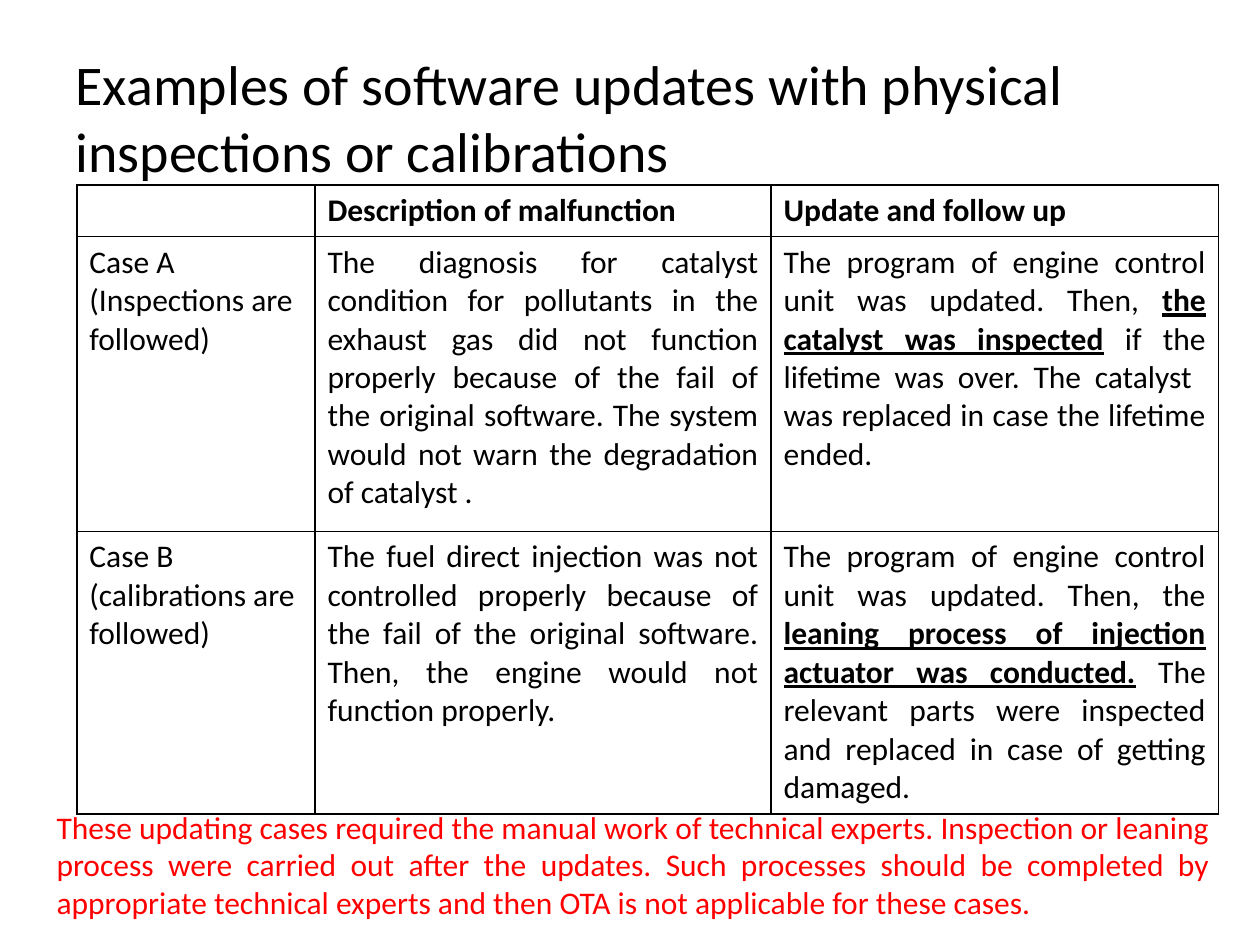
from lxml.etree import SubElement
from pptx import Presentation
from pptx.dml.color import RGBColor
from pptx.enum.text import MSO_ANCHOR, PP_ALIGN
from pptx.oxml.ns import qn
from pptx.util import Inches, Pt

HUES = {"ink": "000000", "note": "FF0000"}
TITLE = "Examples of software updates with physical inspections or calibrations"
NOTE = (
    "These updating cases required the manual work of technical experts. "
    "Inspection or leaning process were carried out after the updates. "
    "Such processes should be completed by appropriate technical experts "
    "and then OTA is not applicable for these cases."
)
PLAIN = {"bold": False, "underline": False}
HEAD = {"bold": True, "underline": False}
KEY = {"bold": True, "underline": True}

ROWS = [
    [
        [],
        [[("Description of malfunction", HEAD)]],
        [[("Update and follow up", HEAD)]],
    ],
    [
        [[("Case A", PLAIN)], [("(Inspections are followed)", PLAIN)]],
        [[(
            "The diagnosis for catalyst condition for pollutants in the exhaust gas "
            "did not function properly because of the fail of the original software. "
            "The system would not warn the degradation of catalyst .", PLAIN)]],
        [[
            ("The program of engine control unit was updated. Then, ", PLAIN),
            ("the catalyst was inspected", KEY),
            (" if the lifetime was over. The catalyst  was replaced in case "
             "the lifetime ended.", PLAIN),
        ]],
    ],
    [
        [[("Case B", PLAIN)], [("(calibrations are followed)", PLAIN)]],
        [[(
            "The fuel direct injection was not controlled properly because of the fail "
            "of the original software. Then, the engine would not function properly.",
            PLAIN)]],
        [[
            ("The program of engine control unit was updated. Then, the ", PLAIN),
            ("leaning process of injection actuator was conducted.", KEY),
            (" The relevant parts were inspected and replaced in case of "
             "getting damaged.", PLAIN),
        ]],
    ],
]
WIDTHS = [1.89, 3.62, 3.55]
HEIGHTS = [0.41, 2.34, 2.24]


def add_run(para, text, size=18, hue="ink", form=PLAIN):
    run = para.add_run()
    run.text = text
    for key, value in {"name": "Calibri", "size": Pt(size), **form}.items():
        setattr(run.font, key, value)
    run.font.color.rgb = RGBColor.from_string(HUES[hue])


def add_edges(cell, wide):
    props = cell._tc.get_or_add_tcPr()
    for spot, side in enumerate(("L", "R", "T", "B")):
        edge = SubElement(props, qn(f"a:ln{side}"), w=str(Pt(wide[side])))
        fill = SubElement(edge, qn("a:solidFill"))
        SubElement(fill, qn("a:srgbClr"), val=HUES["ink"])
        props.insert(spot, edge)


def fill_cell(cell, paras, row, col):
    cell.fill.background()
    add_edges(cell, {
        "L": 1, "R": 1,
        "T": 0.75 if row == 1 else 1,
        "B": 0.75 if row == 0 else 1,
    })
    frame = cell.text_frame
    for spot, runs in enumerate(paras):
        para = frame.add_paragraph() if spot else frame.paragraphs[0]
        para.alignment = PP_ALIGN.JUSTIFY if row and col else PP_ALIGN.LEFT
        for text, form in runs:
            add_run(para, text, form=form)


def add_grid(slide):
    grid = slide.shapes.add_table(
        len(ROWS), len(WIDTHS), Inches(0.61), Inches(1.47),
        Inches(sum(WIDTHS)), Inches(sum(HEIGHTS))).table
    grid.first_row = grid.horz_banding = False
    for col, width in zip(grid.columns, WIDTHS):
        col.width = Inches(width)
    for row, height in zip(grid.rows, HEIGHTS):
        row.height = Inches(height)
    for row, cells in enumerate(ROWS):
        for col, paras in enumerate(cells):
            fill_cell(grid.cell(row, col), paras, row, col)


def main():
    deck = Presentation()
    deck.slide_width, deck.slide_height = Inches(10), Inches(7.5)
    slide = deck.slides.add_slide(deck.slide_layouts[5])

    title = slide.shapes.title
    place = {"left": 0.5, "top": 0.3, "width": 9, "height": 1.25}
    for key, value in place.items():
        setattr(title, key, Inches(value))
    title.text_frame.vertical_anchor = MSO_ANCHOR.MIDDLE
    para = title.text_frame.paragraphs[0]
    para.alignment = PP_ALIGN.LEFT
    add_run(para, TITLE, 32)

    add_grid(slide)

    note = slide.shapes.add_textbox(
        Inches(0.35), Inches(6.36), Inches(9.35), Inches(1.01)).text_frame
    note.word_wrap = True
    para = note.paragraphs[0]
    para.alignment = PP_ALIGN.JUSTIFY
    add_run(para, NOTE, hue="note")

    deck.save("out.pptx")


if __name__ == "__main__":
    main()
